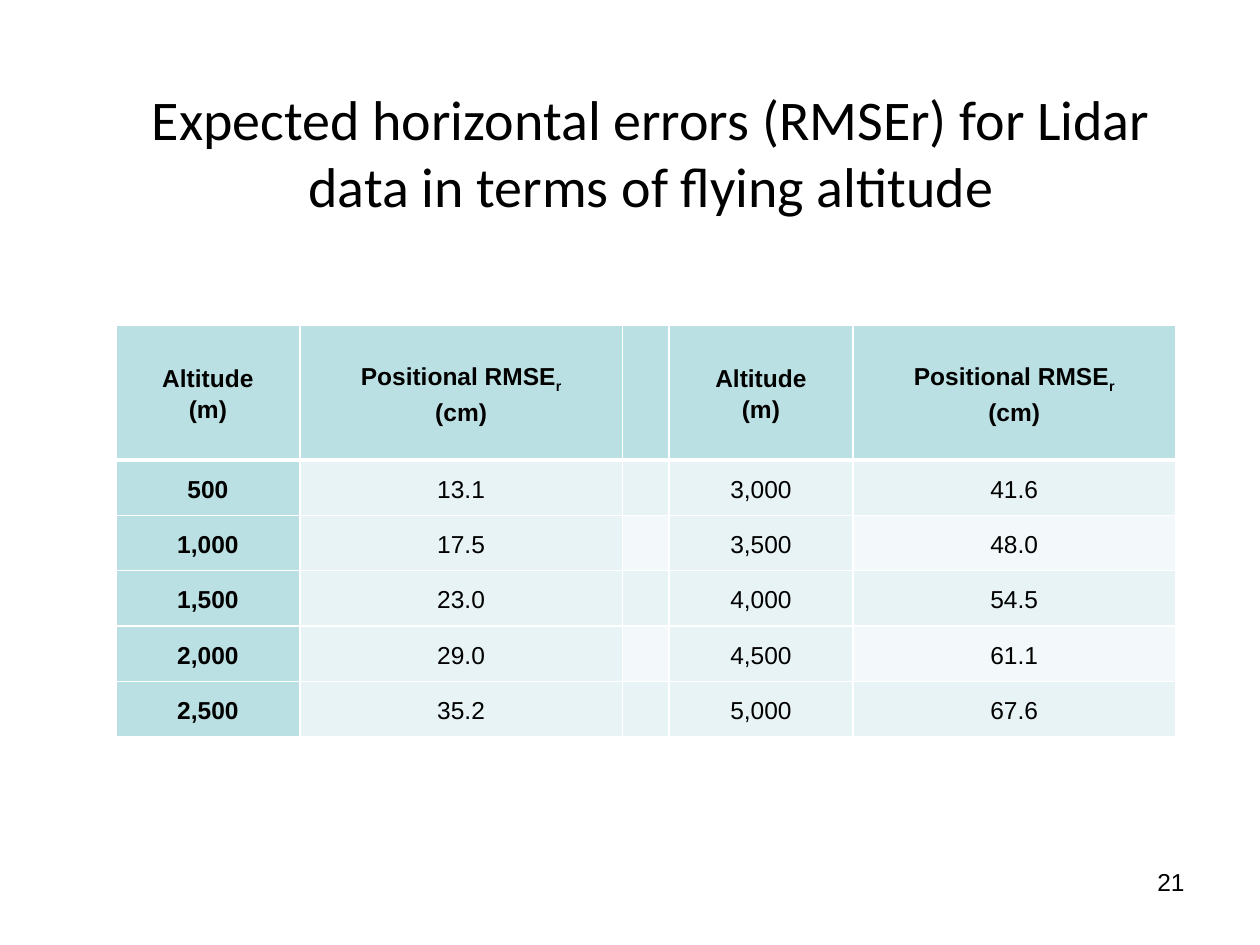
from dataclasses import dataclass

from lxml import etree
from pptx import Presentation
from pptx.dml.color import RGBColor
from pptx.enum.text import MSO_ANCHOR, PP_ALIGN
from pptx.oxml.ns import qn
from pptx.util import Inches, Pt

CENTER, RIGHT = PP_ALIGN.CENTER, PP_ALIGN.RIGHT
TOP, MIDDLE = MSO_ANCHOR.TOP, MSO_ANCHOR.MIDDLE

BLACK = RGBColor(0x00, 0x00, 0x00)
WHITE = RGBColor(0xFF, 0xFF, 0xFF)
TEAL = RGBColor(0xBB, 0xE0, 0xE3)
PALE = RGBColor(0xE7, 0xF3, 0xF4)
FAINT = RGBColor(0xF3, 0xF9, 0xFA)


@dataclass
class Label:
    text: str
    left: float
    top: float
    width: float
    height: float
    size: int
    font: str
    align: PP_ALIGN
    anchor: MSO_ANCHOR


LABELS = [
    Label("Expected horizontal errors (RMSEr) for Lidar data in terms of flying altitude",
          0.67, 0.58, 9, 1.25, 32, "Calibri", CENTER, MIDDLE),
    Label("21", 7.17, 6.83, 2.33, 0.52, 14, "Arial", RIGHT, TOP),
]

# Header cells list their parts: text, "\n" for a line break, "_r" for a subscript
ALT = ("Altitude", "\n", "(m)")
ERROR = ("Positional RMSE", "_r", "\n", "(cm)")
ROWS = [
    (ALT, ERROR, (), ALT, ERROR),
    (("500",), ("13.1",), (), ("3,000",), ("41.6",)),
    (("1,000",), ("17.5",), (), ("3,500",), ("48.0",)),
    (("1,500",), ("23.0",), (), ("4,000",), ("54.5",)),
    (("2,000",), ("29.0",), (), ("4,500",), ("61.1",)),
    (("2,500",), ("35.2",), (), ("5,000",), ("67.6",)),
]
WIDTHS = [1.46, 2.56, 0.37, 1.46, 2.56]
HEAD, BODY = 1.07, 0.44
BANDED = (2, 4)


def write(frame, parts: tuple, *, size: int = 14, font: str = "Arial",
          bold: bool = False, align: PP_ALIGN = CENTER, space: float = 1.0) -> None:
    para = frame.paragraphs[0]
    para.alignment, para.line_spacing = align, space
    for part in parts:
        if part == "\n":
            para.add_line_break()
            mark = para._p.findall(qn("a:br"))[-1]
            etree.SubElement(mark, qn("a:rPr"), sz=str(size * 100))
            continue
        run = para.add_run()
        run.text = part.lstrip("_")
        run.font.size, run.font.name = Pt(size), font
        run.font.bold, run.font.color.rgb = bold, BLACK
        if part.startswith("_"):
            run.font._element.set("baseline", "-25000")


def add_label(slide, item: Label) -> None:
    box = slide.shapes.add_textbox(Inches(item.left), Inches(item.top),
                                   Inches(item.width), Inches(item.height))
    frame = box.text_frame
    frame.word_wrap, frame.vertical_anchor = True, item.anchor
    write(frame, (item.text,), size=item.size, font=item.font, align=item.align)


def add_edges(cell, base: int) -> None:
    props = cell._tc.get_or_add_tcPr()
    for side, width in (("L", 1), ("R", 1), ("T", 1), ("B", base)):
        line = etree.SubElement(props, qn(f"a:ln{side}"), w=str(Pt(width)))
        fill = etree.SubElement(line, qn("a:solidFill"))
        etree.SubElement(fill, qn("a:srgbClr"), val=str(WHITE))


def shade(row: int, col: int) -> RGBColor:
    if row == 0 or col == 0:
        return TEAL
    return FAINT if row in BANDED and col in (2, 4) else PALE


def add_grid(slide) -> None:
    high = HEAD + BODY * (len(ROWS) - 1)
    grid = slide.shapes.add_table(len(ROWS), len(WIDTHS), Inches(0.92), Inches(2.58),
                                  Inches(sum(WIDTHS)), Inches(high)).table
    grid.horz_banding = False
    for col, width in zip(grid.columns, WIDTHS):
        col.width = Inches(width)
    for r, parts in enumerate(ROWS):
        grid.rows[r].height = Inches(BODY if r else HEAD)
        for c, part in enumerate(parts):
            cell = grid.cell(r, c)
            cell.margin_left = cell.margin_right = Inches(0.07)
            cell.margin_top = cell.margin_bottom = Inches(0)
            cell.vertical_anchor = MIDDLE
            add_edges(cell, 1 if r else 3)
            cell.fill.solid()
            cell.fill.fore_color.rgb = shade(r, c)
            write(cell.text_frame, part, bold=r == 0 or c == 0, space=1.15)


def main() -> None:
    deck = Presentation()
    deck.slide_width, deck.slide_height = Inches(10), Inches(7.5)
    slide = deck.slides.add_slide(deck.slide_layouts[6])

    # Title and page number
    for item in LABELS:
        add_label(slide, item)

    # Error table
    add_grid(slide)

    deck.save("out.pptx")


if __name__ == "__main__":
    main()
